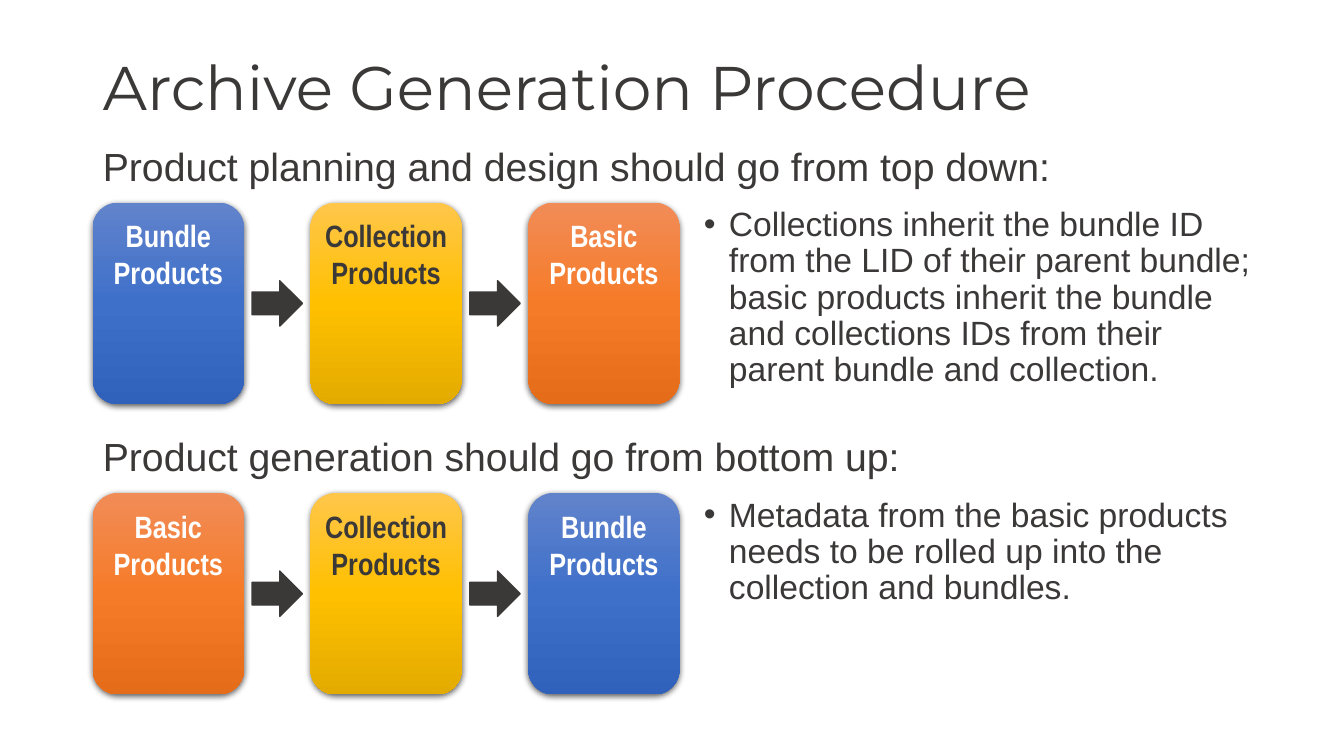
import pptx
import pptx.util
import pptx.dml.color
import pptx.enum.shapes
import pptx.enum.text
import pptx.oxml
import pptx.oxml.ns

Inches, Pt = pptx.util.Inches, pptx.util.Pt
SHAPE = pptx.enum.shapes.MSO_SHAPE
ALIGN = pptx.enum.text.PP_ALIGN
ANCHOR = pptx.enum.text.MSO_ANCHOR

COLORS = {"dark": "3B3838", "white": "FFFFFF", "shadow": "000000"}
# Product level: gradient from top to bottom, then label colour
LEVELS = {
    "Bundle": (("6183CB", "3E70CA", "3062BB"), "white"),
    "Collection": (("FFC64B", "FFC000", "E3AB00"), "dark"),
    "Basic": (("F18C57", "F67B28", "E56C19"), "white"),
}
LEFT, BOX_W, BOX_H, STEP = 0.92, 1.5, 2, 2.16
ARROW_W, ARROW_H = 0.5, 0.45

ROWS = [
    (2.01, "Product planning and design should go from top down:",
     ("Bundle", "Collection", "Basic"),
     "Collections inherit the bundle ID from the LID of their parent bundle; "
     "basic products inherit the bundle and collections IDs from their "
     "parent bundle and collection."),
    (4.89, "Product generation should go from bottom up:",
     ("Basic", "Collection", "Bundle"),
     "Metadata from the basic products needs to be rolled up into the "
     "collection and bundles."),
]


def rgb(name):
    return pptx.dml.color.RGBColor.from_string(COLORS[name])


def xml(text):
    ns = pptx.oxml.ns.nsdecls("a")
    return pptx.oxml.parse_xml(text.replace(" ", f" {ns} ", 1))


class ProcedureSlide:
    def __init__(self, prs):
        self.s = prs.slides.add_slide(prs.slide_layouts.get_by_name("Comparison"))
        self.holders = {ph.placeholder_format.idx: ph for ph in self.s.placeholders}

    def run(self, p, text, size, font="Arial", color="dark", bold=False):
        r = p.add_run()
        r.text = text
        r.font.size, r.font.name, r.font.bold = Pt(size), font, bold
        r.font.color.rgb = rgb(color)

    def place(self, idx, left, top, width, height, anchor=ANCHOR.TOP):
        """Move a placeholder and return its left-aligned first paragraph."""
        sp = self.holders[idx]
        sp.left, sp.top = Inches(left), Inches(top)
        sp.width, sp.height = Inches(width), Inches(height)
        tf = sp.text_frame
        tf.word_wrap, tf.vertical_anchor = True, anchor
        tf.auto_size = pptx.enum.text.MSO_AUTO_SIZE.NONE
        p = tf.paragraphs[0]
        p.alignment, p.line_spacing = ALIGN.LEFT, 0.9
        return p

    def title(self, text):
        p = self.place(0, LEFT, 0.4, 11.5, 1, ANCHOR.MIDDLE)
        self.run(p, text, 44, "Montserrat")

    def heading(self, idx, top, text):
        p = self.place(idx, LEFT, top, 11.5, 0.59)
        p.space_before = Pt(10)
        pPr = p._p.get_or_add_pPr()
        pPr.set("marL", "0")
        pPr.set("indent", "0")
        pPr.append(xml("<a:buNone />"))
        self.run(p, text, 28)

    def bullet(self, idx, top, text):
        p = self.place(idx, 6.88, top, 5.7, 1.99)
        p.space_before = Pt(10)
        pPr = p._p.get_or_add_pPr()
        pPr.set("marL", str(Inches(0.25)))
        pPr.set("indent", str(-Inches(0.25)))
        pPr.append(xml('<a:buFont typeface="Arial"/>'))
        pPr.append(xml('<a:buChar char="•"/>'))
        self.run(p, text, 24)

    def box(self, left, top, level):
        shades, color = LEVELS[level]
        sp = self.s.shapes.add_shape(SHAPE.ROUNDED_RECTANGLE, Inches(left),
                                     Inches(top), Inches(BOX_W), Inches(BOX_H))
        sp.line.fill.background()
        stops = "".join(f'<a:gs pos="{i * 50000}"><a:srgbClr val="{c}"/></a:gs>'
                        for i, c in enumerate(shades))
        spPr = sp._element.spPr
        spPr.insert(2, xml(f'<a:gradFill rotWithShape="1"><a:gsLst>{stops}</a:gsLst>'
                           '<a:lin ang="5400000" scaled="0"/></a:gradFill>'))
        spPr.append(xml(
            f'<a:effectLst ><a:outerShdw blurRad="{Pt(4.5)}" dist="{Pt(1.5)}" '
            f'dir="5400000" rotWithShape="0"><a:srgbClr val="{COLORS["shadow"]}">'
            '<a:alpha val="63000"/></a:srgbClr></a:outerShdw></a:effectLst>'))
        tf = sp.text_frame
        tf.word_wrap, tf.vertical_anchor = True, ANCHOR.TOP
        tf.margin_left = tf.margin_right = 0
        tf.margin_top = Inches(0.07)
        for p, word in ((tf.paragraphs[0], level), (tf.add_paragraph(), "Products")):
            p.alignment = ALIGN.CENTER
            self.run(p, word, 22, "Arial Narrow", color, True)

    def arrow(self, left, top):
        sp = self.s.shapes.add_shape(SHAPE.RIGHT_ARROW, Inches(left), Inches(top),
                                     Inches(ARROW_W), Inches(ARROW_H))
        sp.shadow.inherit = False
        sp.fill.solid()
        sp.fill.fore_color.rgb = rgb("dark")
        sp.line.color.rgb = rgb("dark")
        sp.line.width = Pt(1)

    def flow(self, top, levels):
        """Draw a row of boxes with an arrow centred in each gap."""
        gap = STEP - BOX_W
        for i, level in enumerate(levels):
            left = LEFT + i * STEP
            self.box(left, top, level)
            if i:
                self.arrow(left - (gap + ARROW_W) / 2, top + (BOX_H - ARROW_H) / 2)


def main():
    prs = pptx.Presentation()
    prs.slide_width, prs.slide_height = Inches(13.33), Inches(7.5)
    slide = ProcedureSlide(prs)
    slide.title("Archive Generation Procedure")
    for i, (top, heading, levels, note) in enumerate(ROWS):
        slide.heading(1 + 2 * i, top - 0.6, heading)
        slide.flow(top, levels)
        slide.bullet(2 + 2 * i, top, note)
    prs.save("out.pptx")


if __name__ == "__main__":
    main()
